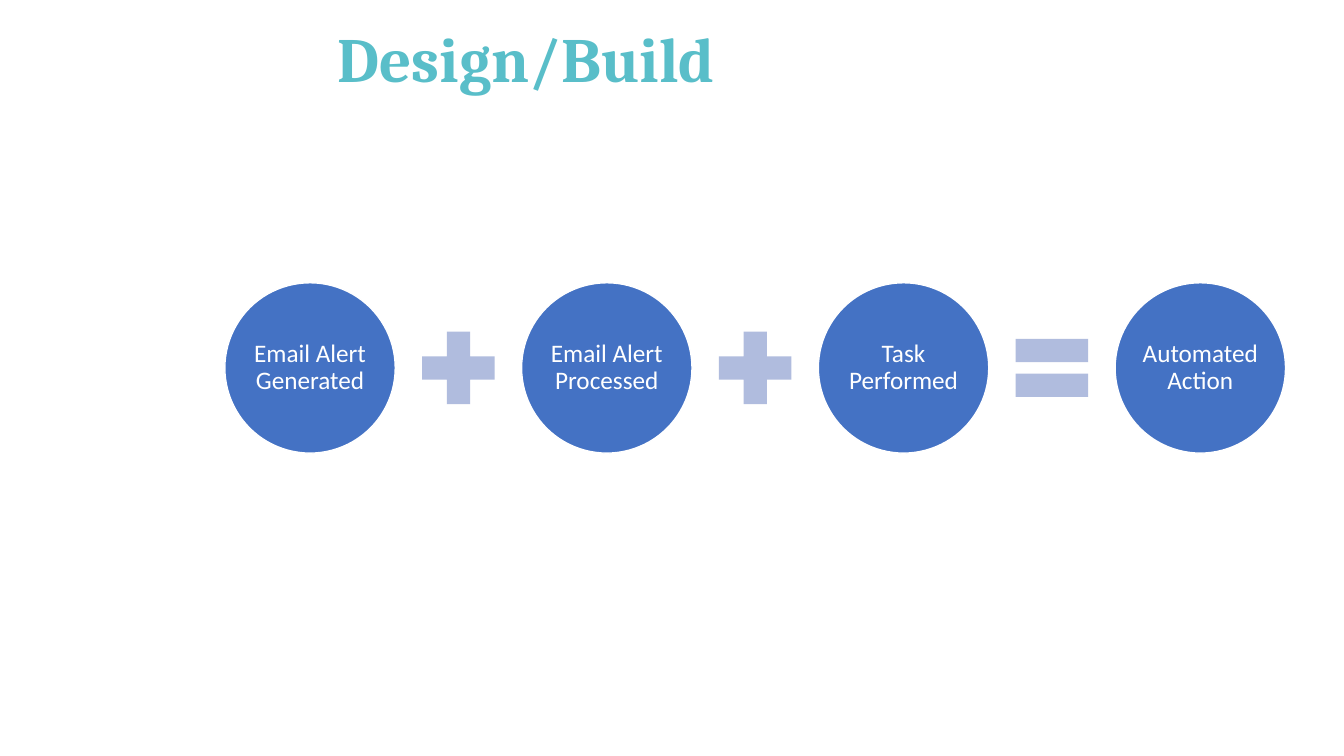
import dataclasses

import pptx
import pptx.dml.color
import pptx.enum.shapes
import pptx.enum.text
import pptx.util

Inches = pptx.util.Inches
PresetShape = pptx.enum.shapes.MSO_SHAPE
Alignment = pptx.enum.text.PP_ALIGN

SLIDE_WIDTH, SLIDE_HEIGHT = 13.33, 7.5
FIRST_LEFT, LAST_LEFT = 2.23, 11.06
ROW_MIDDLE = 3.65
CIRCLE_SIZE, SIGN_SIZE = 1.69, 0.98
TEAL, BLUE, LAVENDER, WHITE = "59BEC9", "4472C4", "B0BCDE", "FFFFFF"


@dataclasses.dataclass(frozen=True)
class Step:
    label: str
    sign_after: PresetShape | None = None


STEPS = [
    Step("Email Alert Generated", PresetShape.MATH_PLUS),
    Step("Email Alert Processed", PresetShape.MATH_PLUS),
    Step("Task Performed", PresetShape.MATH_EQUAL),
    Step("Automated Action"),
]
COLUMN_WIDTH = (LAST_LEFT - FIRST_LEFT) / (len(STEPS) - 1)


def color(hex_code: str) -> pptx.dml.color.RGBColor:
    return pptx.dml.color.RGBColor.from_string(hex_code)


def write_text(shape, text: str, *, font: str, size: float, hex_code: str,
               bold: bool = False, alignment=Alignment.LEFT,
               margins: tuple[float, float] = (0.1, 0.05)) -> None:
    """Fill a shape with one middle-anchored paragraph; margins are (sides, top and bottom)."""
    frame = shape.text_frame
    frame.word_wrap = True
    frame.auto_size = pptx.enum.text.MSO_AUTO_SIZE.NONE
    frame.vertical_anchor = pptx.enum.text.MSO_ANCHOR.MIDDLE
    frame.margin_left = frame.margin_right = Inches(margins[0])
    frame.margin_top = frame.margin_bottom = Inches(margins[1])
    paragraph = frame.paragraphs[0]
    paragraph.alignment = alignment
    paragraph.line_spacing = 0.9
    run = paragraph.add_run()
    run.text = text
    run.font.name = font
    run.font.size = pptx.util.Pt(size)
    run.font.bold = bold
    run.font.color.rgb = color(hex_code)


def add_row_shape(slide, preset: PresetShape, center: float, size: float, fill: str):
    """Add a square, unlined shape centred on the middle of the row."""
    shape = slide.shapes.add_shape(
        preset, Inches(center - size / 2), Inches(ROW_MIDDLE - size / 2),
        Inches(size), Inches(size))
    shape.shadow.inherit = False
    shape.fill.solid()
    shape.fill.fore_color.rgb = color(fill)
    shape.line.fill.background()
    return shape


def add_step(slide, step: Step, column: int) -> None:
    center = FIRST_LEFT + CIRCLE_SIZE / 2 + column * COLUMN_WIDTH
    circle = add_row_shape(slide, PresetShape.OVAL, center, CIRCLE_SIZE, BLUE)
    circle.line.color.rgb = color(WHITE)
    circle.line.width = pptx.util.Pt(1)
    write_text(circle, step.label, font="Calibri", size=18, hex_code=WHITE,
               alignment=Alignment.CENTER, margins=(0, 0))
    if step.sign_after is not None:
        add_row_shape(slide, step.sign_after, center + COLUMN_WIDTH / 2, SIGN_SIZE, LAVENDER)


def add_title(slide, text: str) -> None:
    title = slide.shapes.title
    title.left, title.top = Inches(3.25), Inches(0.19)
    title.width, title.height = Inches(9.17), Inches(0.85)
    write_text(title, text, font="Cambria", size=45, hex_code=TEAL, bold=True)


def main() -> None:
    presentation = pptx.Presentation()
    presentation.slide_width = Inches(SLIDE_WIDTH)
    presentation.slide_height = Inches(SLIDE_HEIGHT)
    slide = presentation.slides.add_slide(presentation.slide_layouts.get_by_name("Title Only"))
    add_title(slide, "Design/Build")
    for column, step in enumerate(STEPS):
        add_step(slide, step, column)
    presentation.save("out.pptx")


if __name__ == "__main__":
    main()
